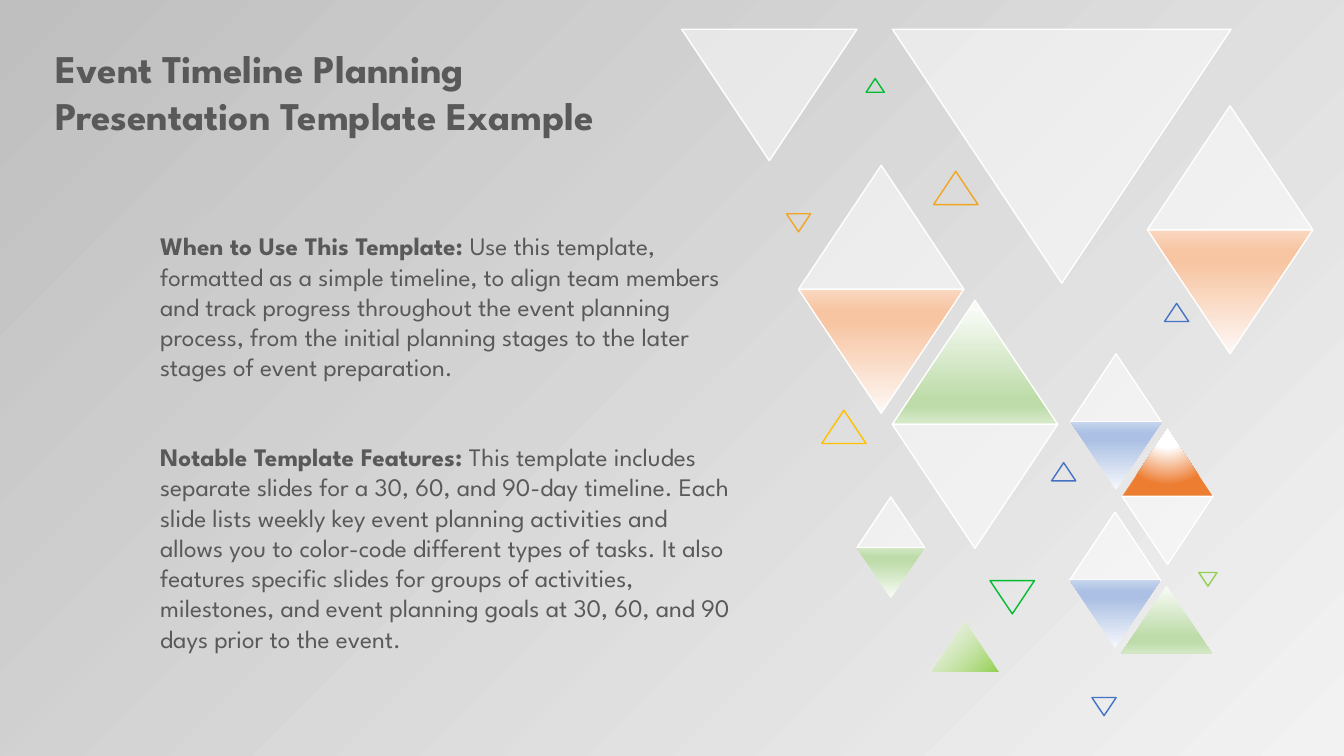
from dataclasses import dataclass

from lxml import etree
from pptx import Presentation
from pptx.dml.color import RGBColor
from pptx.enum.shapes import MSO_SHAPE
from pptx.enum.text import MSO_AUTO_SIZE
from pptx.oxml.ns import nsdecls, qn
from pptx.util import Inches, Pt

TRIANGLE = MSO_SHAPE.ISOSCELES_TRIANGLE
GROW_TO_TEXT = MSO_AUTO_SIZE.SHAPE_TO_FIT_TEXT
FILL_TAGS = [qn("a:noFill"), qn("a:solidFill"), qn("a:gradFill")]


@dataclass(frozen=True)
class Gradient:
    stops: tuple  # (position %, colour, opacity %)
    angle: int = 90
    focus: tuple = ()  # left, top, right, bottom % of a radial focus


def tint(pale, strong, soft, marks=(0, 74, 83, 100)):
    colours = (pale, strong, strong, soft)
    return Gradient(tuple((mark, colour, 100) for mark, colour in zip(marks, colours)))


@dataclass(frozen=True)
class Theme:
    font: str = "League Spartan"
    title_size: int = 28
    body_size: int = 18
    text: str = "595959"
    white: str = "FFFFFF"
    glass_opacity: int = 50
    line_width: int = 1
    emerald: str = "00BD32"
    gold: str = "FFC000"
    amber: str = "F0A622"
    blue: str = "4472C4"
    lime: str = "92D050"
    backdrop: Gradient = Gradient(((0, "F2F2F2", 40), (100, "BFBFBF", 100)), 225)
    glass: Gradient = Gradient(((0, "FFFFFF", 50), (100, "FFFFFF", 50)))
    peach: Gradient = tint("FEF8F5", "F7C5A2", "FAD8C1")
    sage: Gradient = tint("F8FBF6", "BEDCAA", "D4E8C6")
    tall_sage: Gradient = tint("F8FBF6", "BEDCAA", "D4E8C6", (7, 79, 86, 97))
    sky: Gradient = tint("F6F8FC", "ABC0E4", "C7D5ED")
    leaf: Gradient = Gradient(((0, "92D050", 100), (100, "FFFFFF", 50)), 225)
    ember: Gradient = Gradient(
        ((0, "FFFFFF", 100), (35, "FFFFFF", 100), (100, "ED7D31", 100)),
        focus=(50, -80, 50, 180))


THEME = Theme()
ASPECT = 0.75  # triangle height for each unit of width

# left, top, width, upper fill, lower fill
DIAMONDS = [
    (7.92, 1.64, 1.64, THEME.glass, THEME.peach),
    (8.85, 2.98, 1.64, THEME.tall_sage, THEME.glass),
    (10.61, 5.08, 0.9, THEME.glass, THEME.sky),
    (10.62, 3.51, 0.9, THEME.glass, THEME.sky),
    (11.13, 4.25, 0.9, THEME.ember, THEME.glass),
    (8.5, 4.93, 0.67, THEME.glass, THEME.sage),
    (11.38, 1.05, 1.64, THEME.glass, THEME.peach),
]
# left, top, width, points down, fill
SINGLES = [
    (8.85, 0.29, 3.36, True, THEME.glass),
    (6.76, 0.29, 1.74, True, THEME.glass),
    (11.12, 5.81, 0.9, False, THEME.sage),
    (9.23, 6.16, 0.67, False, THEME.leaf),
]
# left, top, width, points down, line colour
OUTLINES = [
    (9.82, 5.76, 0.44, True, THEME.emerald),
    (8.15, 4.07, 0.44, False, THEME.gold),
    (10.43, 4.59, 0.24, False, THEME.blue),
    (10.83, 6.92, 0.24, True, THEME.blue),
    (7.8, 2.12, 0.24, True, THEME.amber),
    (11.55, 3.01, 0.24, False, THEME.blue),
    (8.59, 0.78, 0.18, False, THEME.emerald),
    (11.89, 5.68, 0.18, True, THEME.lime),
    (9.26, 1.7, 0.44, False, THEME.amber),
]
TITLE = ["Event Timeline Planning", "Presentation Template Example"]
# box (left, top, width, height), heading, body
NOTES = [
    ((1.49, 4.33, 5.89, 2.52), "Notable Template Features: ",
     "This template includes separate slides for a 30, 60, and 90-day timeline. "
     "Each slide lists weekly key event planning activities and allows you to "
     "color-code different types of tasks. It also features specific slides for "
     "groups of activities, milestones, and event planning goals at 30, 60, and "
     "90 days prior to the event."),
    ((1.49, 2.24, 5.77, 1.92), "When to Use This Template: ",
     "Use this template, formatted as a simple timeline, to align team members "
     "and track progress throughout the event planning process, from the initial "
     "planning stages to the later stages of event preparation."),
]


def set_gradient(properties, gradient):
    """Replace the solid fill in a properties element with a gradient."""
    stops = "".join(
        f'<a:gs pos="{mark * 1000}"><a:srgbClr val="{colour}">'
        f'<a:alpha val="{opacity * 1000}"/></a:srgbClr></a:gs>'
        for mark, colour, opacity in gradient.stops)
    if gradient.focus:
        sides = " ".join(f'{side}="{share * 1000}"'
                         for side, share in zip("ltrb", gradient.focus))
        direction = f'<a:path path="circle"><a:fillToRect {sides}/></a:path>'
    else:
        direction = f'<a:lin ang="{gradient.angle * 60000}" scaled="0"/>'
    element = etree.fromstring(
        f'<a:gradFill {nsdecls("a")} rotWithShape="1">'
        f'<a:gsLst>{stops}</a:gsLst>{direction}</a:gradFill>')
    old = next(child for child in properties if child.tag in FILL_TAGS)
    properties.replace(old, element)


def set_glass(shape):
    shape.fill.solid()
    shape.fill.fore_color.rgb = RGBColor.from_string(THEME.white)
    colour = shape.fill._xPr.find(qn("a:solidFill"))[0]
    etree.SubElement(colour, qn("a:alpha"), val=str(THEME.glass_opacity * 1000))


def add_triangle(group, left, top, width, down, fill=None, line=None):
    shape = group.shapes.add_shape(TRIANGLE, Inches(left), Inches(top),
                                   Inches(width), Inches(width * ASPECT))
    shape.shadow.inherit = False
    shape.rotation = 180 if down else 0
    if fill is None:
        shape.fill.background()
    elif fill is THEME.glass:
        set_glass(shape)
    else:
        shape.fill.solid()
        set_gradient(shape.fill._xPr, fill)
    # Glass and large triangles carry a white edge
    if line is None and (fill is THEME.glass or width > 1):
        line = THEME.white
    if line:
        shape.line.color.rgb = RGBColor.from_string(line)
        shape.line.width = Pt(THEME.line_width)
    else:
        shape.line.fill.background()


def add_mosaic(page):
    group = page.shapes.add_group_shape()
    for left, top, width, upper, lower in DIAMONDS:
        add_triangle(group, left, top, width, False, upper)
        add_triangle(group, left, top + width * ASPECT, width, True, lower)
    for left, top, width, down, fill in SINGLES:
        add_triangle(group, left, top, width, down, fill)
    for left, top, width, down, line in OUTLINES:
        add_triangle(group, left, top, width, down, line=line)


def add_text(page, box, paragraphs, size):
    """Each paragraph is a list of (words, bold) spans."""
    frame = page.shapes.add_textbox(*map(Inches, box)).text_frame
    frame.word_wrap = True
    frame.auto_size = GROW_TO_TEXT
    for index, spans in enumerate(paragraphs):
        para = frame.add_paragraph() if index else frame.paragraphs[0]
        for words, bold in spans:
            span = para.add_run()
            span.text = words
            span.font.name = THEME.font
            span.font.size = Pt(size)
            span.font.bold = bold
            span.font.color.rgb = RGBColor.from_string(THEME.text)


def add_backdrop(page):
    page.background.fill.solid()
    set_gradient(page.element.find(".//" + qn("p:bgPr")), THEME.backdrop)


def main():
    deck = Presentation()
    deck.slide_width, deck.slide_height = Inches(13.33), Inches(7.5)
    page = deck.slides.add_slide(deck.slide_layouts[6])
    add_backdrop(page)
    add_mosaic(page)
    # Title and notes
    add_text(page, (0.45, 0.39, 6.16, 1.04), [[(line, True)] for line in TITLE],
             THEME.title_size)
    for box, heading, body in NOTES:
        add_text(page, box, [[(heading, True), (body, False)]], THEME.body_size)
    deck.save("out.pptx")


if __name__ == "__main__":
    main()
